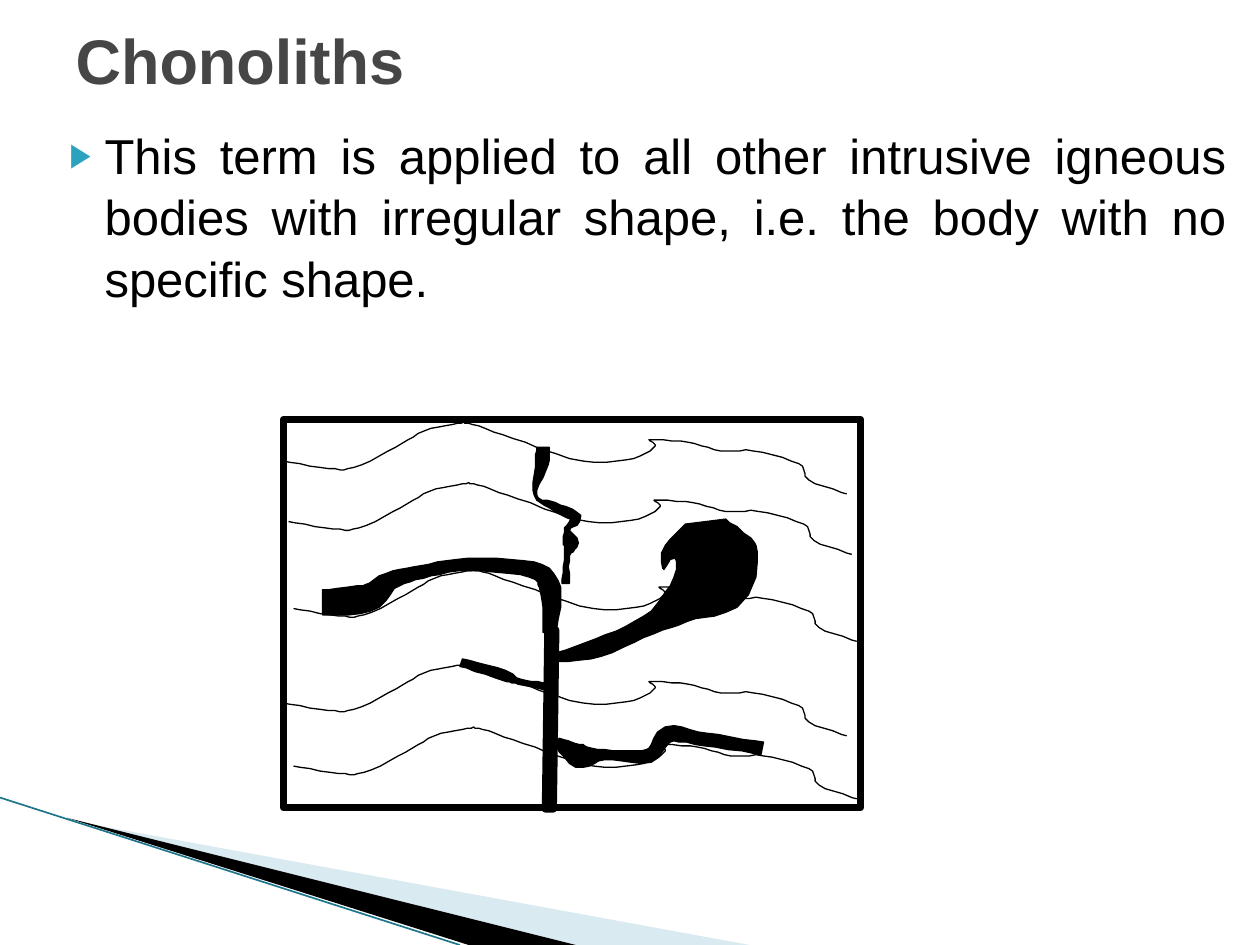
from math import hypot

from lxml.etree import SubElement as Sub
from pptx import Presentation
from pptx.dml.color import RGBColor as RGB
from pptx.enum.shapes import MSO_CONNECTOR as Link, MSO_SHAPE as Shape
from pptx.enum.text import MSO_ANCHOR as Anchor, MSO_AUTO_SIZE as Auto, PP_ALIGN as Align
from pptx.oxml.ns import qn
from pptx.util import Emu, Inches, Pt

FONT = "Arial"
UNIT = 9144
STEPS = 5
HUE = {"ink": "000000", "title": "464646", "mark": "2DA2BF",
       "pale": "A0CBDC", "edge": "1E768C", "paper": "FFFFFF"}
TITLE = "Chonoliths"
BODY = ("This term is applied to all other intrusive igneous bodies with "
        "irregular shape, i.e. the body with no specific shape.")

SWEEPS = [("pale", 40, [(55, 651), (595, 750), (456, 750)]),
          ("ink", 100, [(53, 649), (457, 750), (372, 750)])]

WAVE = [(0, 33), (36, 39), (56, 38), (89, 22), (112, 9), (138, 3), (150, 4),
        (182, 15), (238, 33), (278, 31), (295, 21), (291, 16), (321, 18),
        (347, 25), (373, 25), (409, 35), (417, 48), (447, 59)]
LAYERS = [(225, 333), (229, 381), (233, 450), (225, 525), (233, 575)]

# Each spine point holds x, y and half of the body's width there.
BODIES = {
    "bulb": [(438, 523, 3), (475, 514, 7), (515, 496, 8), (542, 478, 17),
             (563, 458, 34), (562, 435, 37), (560, 414, 16)],
    "spur": [(366, 526, 3), (400, 536, 4), (412, 541, 2), (434, 545, 3)],
    "arch": [(256, 478, 10), (291, 475, 11), (310, 461, 7), (335, 454, 5),
             (372, 448, 5), (422, 452, 6), (437, 468, 8), (436, 502, 5)],
    "vein": [(431, 355, 5), (430, 368, 5), (425, 393, 1), (440, 402, 3),
             (457, 411, 4), (450, 420, 2), (453, 431, 6), (450, 441, 2),
             (449, 463, 3)],
    "branch": [(442, 588, 3), (460, 600, 9), (480, 599, 4), (515, 600, 5),
               (530, 583, 6), (560, 587, 5), (605, 594, 5)],
}


def smooth(knots):
    ends = [knots[0], *knots, knots[-1]]
    spots = []
    for group in zip(ends, ends[1:], ends[2:], ends[3:]):
        for step in range(STEPS):
            t = step / STEPS
            spots.append(tuple(
                b + t * (c - a) / 2 + t * t * (a - 2.5 * b + 2 * c - d / 2)
                + t ** 3 * (1.5 * (b - c) + (d - a) / 2)
                for a, b, c, d in zip(*group)))
    return spots + [knots[-1]]


def ribbon(spine):
    spots = smooth(spine)
    upper, lower = [], []
    for last, (x, y, half), after in zip([spots[0], *spots], spots, [*spots[1:], spots[-1]]):
        run, rise = after[0] - last[0], after[1] - last[1]
        size = hypot(run, rise)
        across, down = -rise * half / size, run * half / size
        upper.append((x + across, y + down))
        lower.append((x - across, y - down))
    return upper + lower[::-1]


def paint(item, fill, line, width=0.75):
    item.shadow.inherit = False
    if fill:
        item.fill.solid()
        item.fill.fore_color.rgb = RGB.from_string(HUE[fill])
    else:
        item.fill.background()
    if line:
        item.line.color.rgb = RGB.from_string(HUE[line])
        item.line.width = Pt(width)
    else:
        item.line.fill.background()


def trace(spots, fill, line):
    pen = shapes.build_freeform(*spots[0], scale=UNIT)
    pen.add_line_segments(spots[1:], close=bool(fill))
    item = pen.convert_to_shape()
    paint(item, fill, line)
    return item


def block(kind, area, fill):
    item = shapes.add_shape(kind, *map(Inches, area))
    paint(item, fill, "ink", 4.33)
    Sub(item._element.spPr.find(qn("a:ln")), qn("a:round"))


def place(holder, area, anchor):
    holder.left, holder.top, holder.width, holder.height = map(Inches, area)
    frame = holder.text_frame
    frame.word_wrap = True
    frame.auto_size = Auto.NONE
    frame.vertical_anchor = anchor
    return frame.paragraphs[0]


def write(para, text, size, color, bold):
    run = para.add_run()
    run.text = text
    run.font.name = FONT
    run.font.size = Pt(size)
    run.font.bold = bold
    run.font.color.rgb = RGB.from_string(HUE[color])


deck = Presentation()
deck.slide_width, deck.slide_height = Inches(10), Inches(7.5)
slide = deck.slides.add_slide(deck.slide_layouts[1])
shapes = slide.shapes

head = place(shapes.title, (0.5, 0.08, 9, 0.78), Anchor.MIDDLE)
head.alignment = Align.LEFT
write(head, TITLE, 36, "title", True)

para = place(slide.placeholders[1], (0.33, 0.92, 9.5, 1.75), Anchor.TOP)
para.alignment = Align.JUSTIFY
para.line_spacing = 1.05
para.space_before = Pt(0)
props = para._p.get_or_add_pPr()
props.set("marL", str(Inches(0.4)))
props.set("indent", str(Inches(-0.28)))
Sub(Sub(props, qn("a:buClr")), qn("a:srgbClr"), val=HUE["mark"])
Sub(props, qn("a:buSzPct"), val="68000")
Sub(props, qn("a:buFont"), typeface=FONT)
Sub(props, qn("a:buChar"), char="▶")
write(para, BODY, 28, "ink", False)

for color, share, spots in SWEEPS:
    item = trace(spots, color, None)
    if share < 100:
        tint = item._element.spPr.find(qn("a:solidFill"))[0]
        Sub(tint, qn("a:alpha"), val=str(share * 1000))

edge = shapes.add_connector(Link.STRAIGHT, Emu(0), Inches(6.33), Inches(3.65), Inches(7.5))
edge.line.color.rgb = RGB.from_string(HUE["edge"])
edge.line.width = Pt(0.95)
Sub(edge._element.spPr, qn("a:effectLst"))

block(Shape.RECTANGLE, (2.25, 3.33, 4.58, 3.08), "paper")
for left, top in LAYERS:
    trace([(left + x, top + y) for x, y in smooth(WAVE)], None, "ink")
block(Shape.PARALLELOGRAM, (4.33, 5, 0.08, 1.42), "ink")
for spine in BODIES.values():
    trace(ribbon(spine), "ink", "ink")

deck.save("out.pptx")
